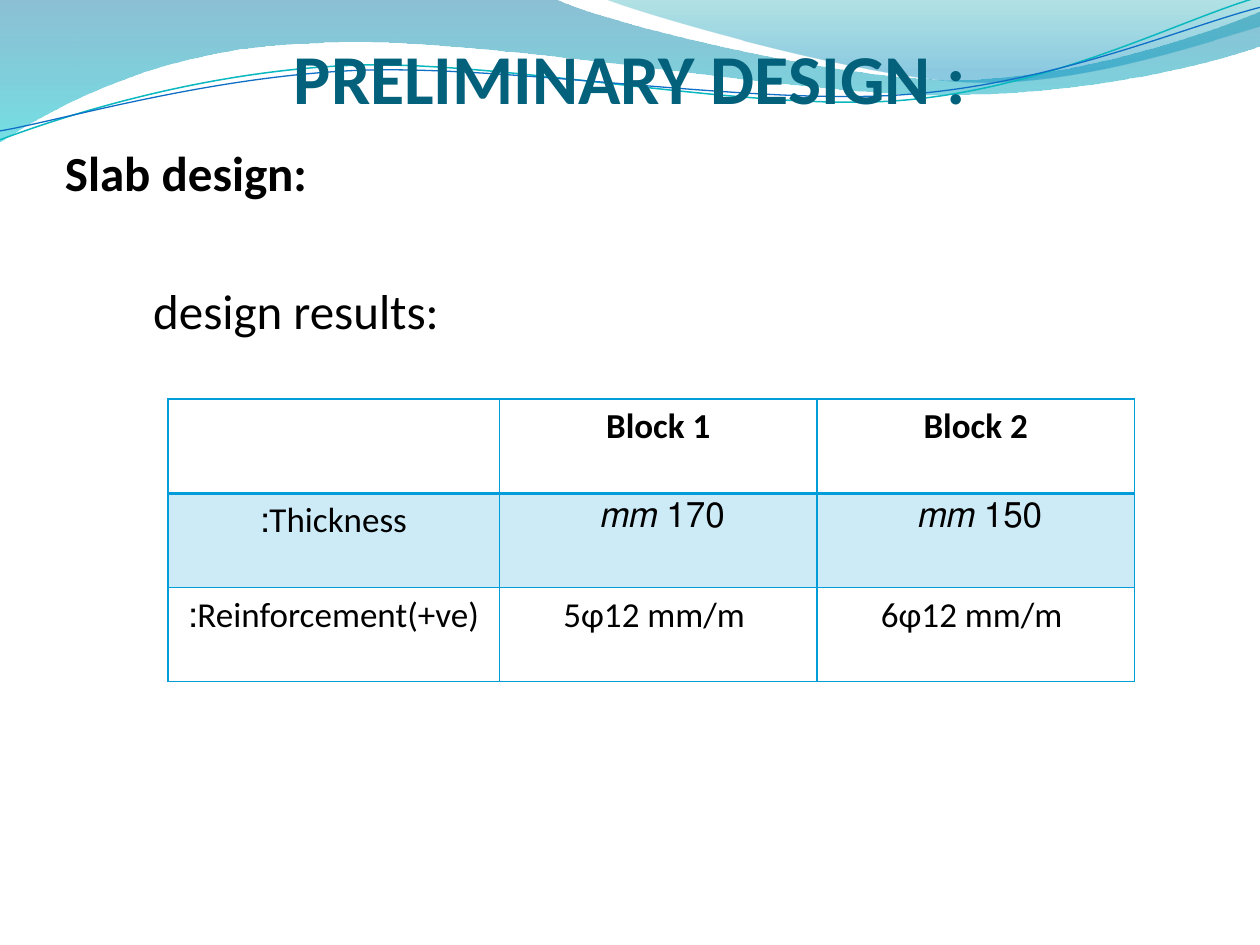
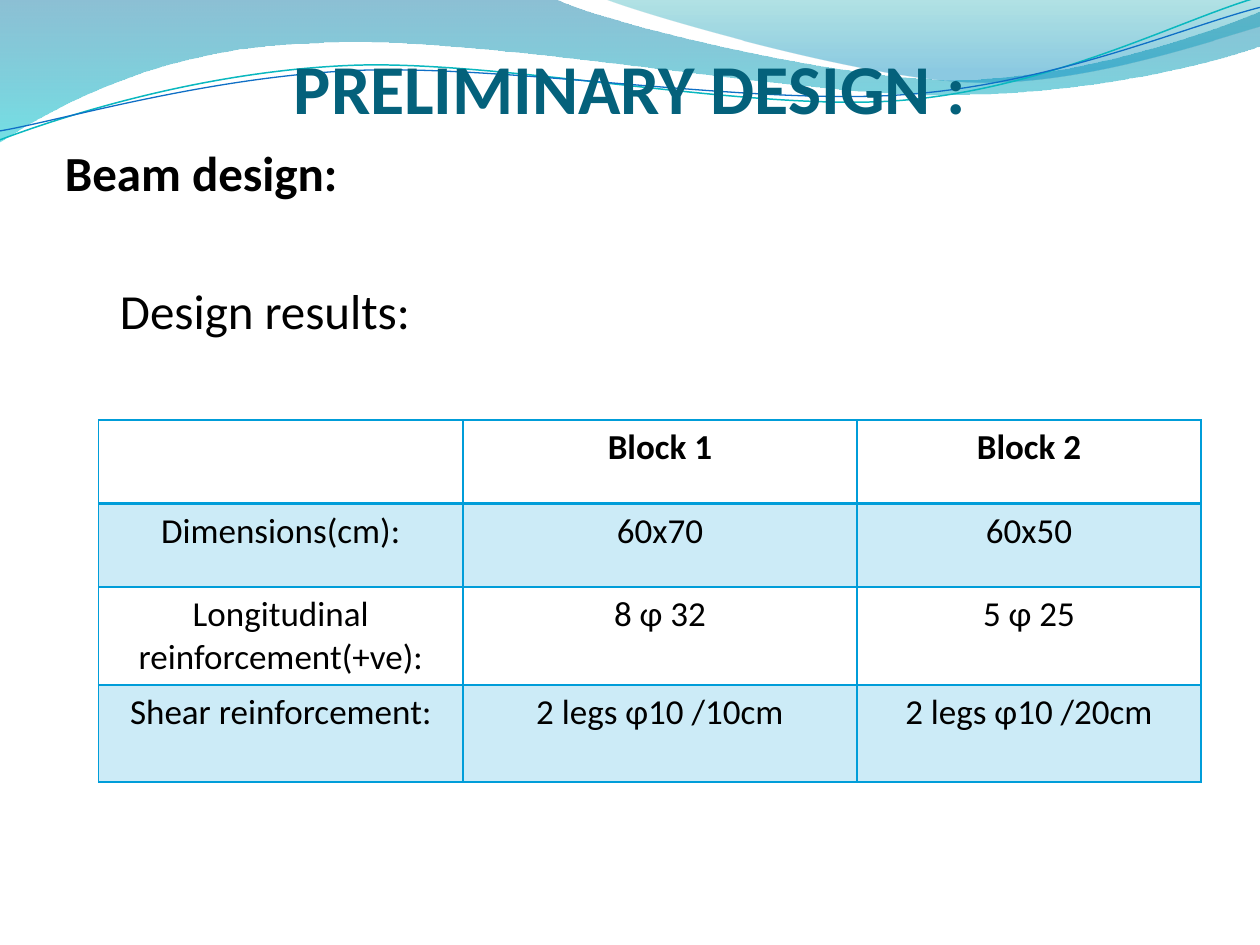
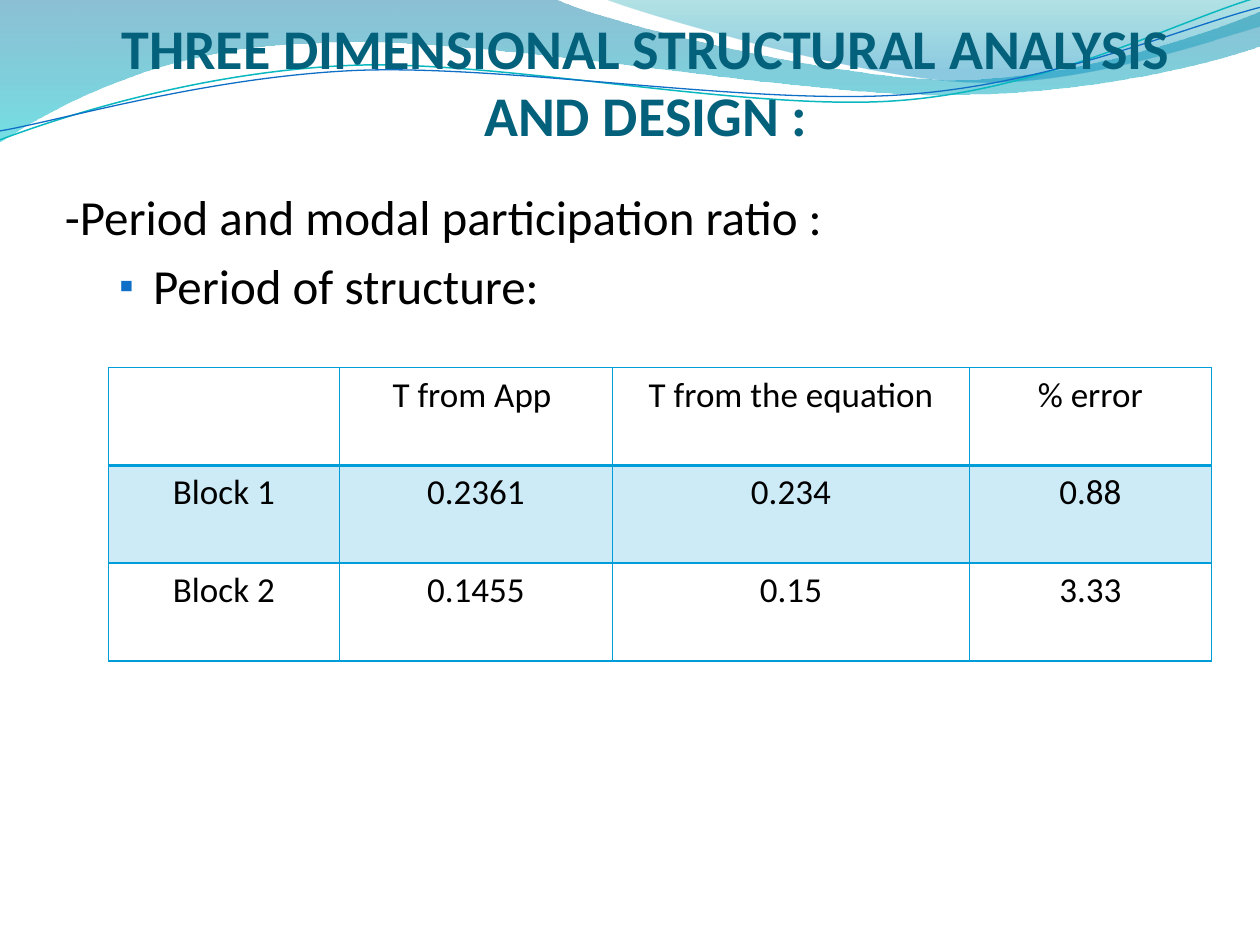
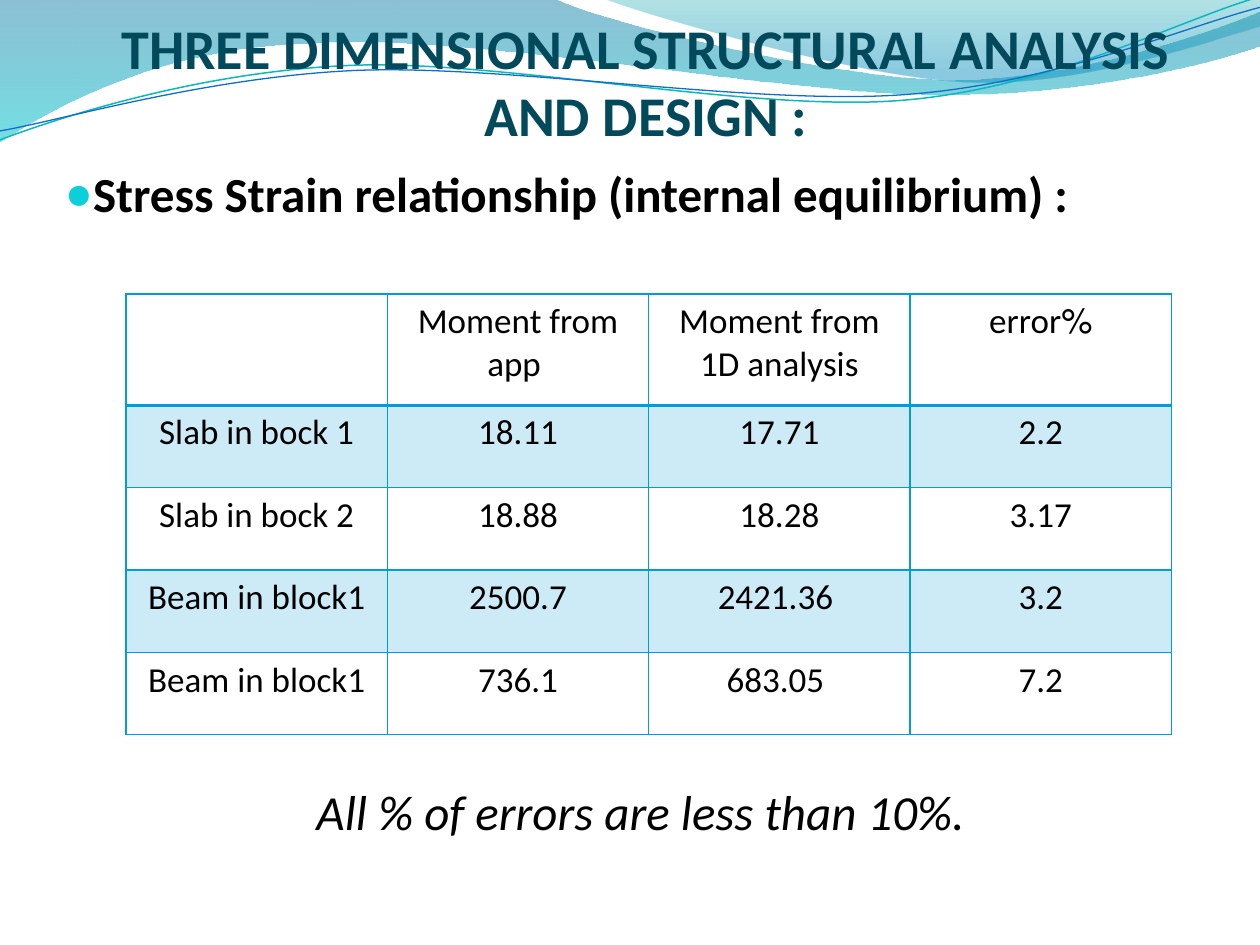
"""Builds four slides of structural design results under a shared wave header."""
from dataclasses import dataclass

from lxml import etree
from pptx import Presentation
from pptx import util as u
from pptx.dml.color import RGBColor
from pptx.enum import text
from pptx.oxml.ns import qn


@dataclass(frozen=True)
class Theme:
    """Colours, fonts and type sizes of the deck."""
    font: str = "Calibri"
    bullet_font: str = "Arial"
    ink: str = "000000"
    title: str = "04617B"
    deep_title: str = "03495C"
    grid: str = "009DD9"
    square: str = "0F6FC6"
    dot: str = "0BD0D9"
    title_size: float = 40
    long_title_size: float = 32
    body_size: float = 28
    cell_size: float = 20
    line_gap: float = 6
    blank_line_gap: float = 45.5
    table_gap: float = 319.5
    band_tint: int = 20


THEME = Theme()
CENTER = text.PP_ALIGN.CENTER
TITLE_BOX = (1.27, 0.43, 22.86, 1.96)
LONG_TITLE_BOX = (1.27, 0.85, 23.5, 2.13)
LONG_TITLE = "THREE DIMENSIONAL STRUCTURAL ANALYSIS AND DESIGN :"
RIGHT_TO_LEFT = {"Thickness:", "Reinforcement(+ve):", "170 𝑚𝑚 ", "150 𝑚𝑚 ", "%error"}

BANDS = [
    ((0, 0),
     [[(11.18, -0.03)],
      [(12.09, 0.43), (16.87, 1.6), (19.25, 1.6)],
      [(21.67, 1.6), (24.33, 0.66), (25.4, 0.23)],
      [(25.43, 0.91)],
      [(24.97, 1.12), (22.1, 1.93), (18.95, 1.91)],
      [(15.8, 1.91), (9.7, 0.71), (6.53, 0.86)],
      [(3.28, 0.91), (1.17, 2.11), (-0.03, 2.87)],
      [(0, 0)]],
     [(0, "0074A1", 45), (1, "00C6CF", 55)]),
    ((12.17, -0.03),
     [[(12.93, 0.28), (17.32, 1.57), (19.53, 1.65)],
      [(21.74, 1.75), (24.41, 0.81), (25.4, 0.53)],
      [(25.4, 0)],
      [(12.17, -0.03)]],
     [(0, "00A1A9", 30), (0.8, "008BBF", 45)]),
]
STRANDS = [
    ((0, 2.82),
     [[(1.22, 2.36), (4.01, 1.45), (7.04, 1.32)],
      [(10.03, 1.19), (15.06, 2.26), (18.11, 2.03)],
      [(21.16, 1.8), (23.83, 0.38), (25.35, -0.05)]],
     "0AB8BF", 0.85),
    ((0, 2.64),
     [[(1.19, 2.44), (4.17, 1.55), (7.19, 1.42)],
      [(10.24, 1.3), (15.16, 2.13), (18.21, 1.91)],
      [(21.23, 1.7), (23.9, 0.53), (25.4, 0.15)]],
     "0F6FC6", 0.75),
]


def rgb(color):
    """Return a colour object for a hex string."""
    return RGBColor.from_string(color)


def fade(element, percents):
    """Set the opacity of the colours in an element, in order."""
    for color, percent in zip(element.iter(qn("a:srgbClr")), percents):
        etree.SubElement(color, qn("a:alpha"), val=str(percent * 1000))


def write(para, words, size, color=THEME.ink, bold=False, italic=False,
          align=None, before=0, margin=0, hang=0, bullet=None):
    """Write one formatted run into a paragraph."""
    span = para.add_run()
    span.text = words
    font = span.font
    font.name, font.size, font.bold, font.italic = THEME.font, u.Pt(size), bold, italic
    font.color.rgb = rgb(color)
    para.alignment = align
    para.space_before = u.Pt(before)
    props = para._p.get_or_add_pPr()
    if margin:
        props.set("marL", str(u.Cm(margin)))
        props.set("indent", str(-u.Cm(hang)))
    if words in RIGHT_TO_LEFT:
        props.set("rtl", "1")
    if bullet:
        sign, tint, percent = bullet
        etree.SubElement(etree.SubElement(props, qn("a:buClr")), qn("a:srgbClr"), val=tint)
        etree.SubElement(props, qn("a:buSzPct"), val=str(percent * 1000))
        etree.SubElement(props, qn("a:buFont"), typeface=THEME.bullet_font)
        etree.SubElement(props, qn("a:buChar"), char=sign)


def add_outline(slide, start, pieces, close):
    """Draw a freeform of straight pieces (one point) and cubic pieces (three points)."""
    builder = slide.shapes.build_freeform(*map(u.Cm, start))
    builder.add_line_segments([(u.Cm(x), u.Cm(y)) for piece in pieces for x, y in piece],
                              close=close)
    shape = builder.convert_to_shape()
    shape.shadow.inherit = False
    segments = iter(list(shape.element.iter(qn("a:lnTo"))))
    for piece in pieces:
        first, *others = [next(segments) for _ in piece]
        if others:
            first.addnext(curve := etree.Element(qn("a:cubicBezTo")))
            for segment in (first, *others):
                curve.append(segment[0])
                segment.getparent().remove(segment)
    return shape


def add_waves(slide):
    """Draw the wave header and hand it to the layout that all slides share."""
    waves = []
    for start, pieces, stops in BANDS:
        band = add_outline(slide, start, pieces, True)
        band.line.fill.background()
        band.fill.gradient()
        band.fill.gradient_angle = 270
        for stop, (position, color, _) in zip(band.fill.gradient_stops, stops):
            stop.position = position
            stop.color.rgb = rgb(color)
        fade(band.element, [opacity for _, _, opacity in stops])
        waves.append(band)
    for start, pieces, color, width in STRANDS:
        strand = add_outline(slide, start, pieces, False)
        strand.fill.background()
        strand.line.color.rgb = rgb(color)
        strand.line.width = u.Pt(width)
        waves.append(strand)
    for number, wave in enumerate(waves, 20):
        wave.element.nvSpPr.cNvPr.set("id", str(number))
        slide.slide_layout.shapes.element.append(wave.element)


def add_title(slide, box, words, size, color=THEME.title):
    """Place and format the title placeholder."""
    title = slide.shapes.title
    title.left, title.top, title.width, title.height = map(u.Cm, box)
    frame = title.text_frame
    frame.word_wrap = True
    frame.auto_size = text.MSO_AUTO_SIZE.NONE
    frame.vertical_anchor = text.MSO_ANCHOR.BOTTOM
    frame.margin_left = frame.margin_right = frame.margin_bottom = 0
    frame.margin_top = u.Cm(0.13)
    write(frame.paragraphs[0], words, size, color, bold=True, align=CENTER)


def add_body(slide, box, lines):
    """Place a text box with one paragraph for each line and its format."""
    frame = slide.shapes.add_textbox(*map(u.Cm, box)).text_frame
    frame.word_wrap = True
    for index, (words, style) in enumerate(lines):
        para = frame.add_paragraph() if index else frame.paragraphs[0]
        write(para, words, THEME.body_size, **style)


def add_borders(cell, widths):
    """Rule the left, right, top and bottom edges of a cell."""
    props = cell._tc.get_or_add_tcPr()
    for index, (side, width) in enumerate(zip("LRTB", widths)):
        line = etree.Element(qn(f"a:ln{side}"), w=str(u.Pt(width)))
        fill = etree.SubElement(line, qn("a:solidFill"))
        etree.SubElement(fill, qn("a:srgbClr"), val=THEME.grid)
        props.insert(index, line)


def add_results(slide, corner, widths, heights, rows, bold_head=False):
    """Place a ruled table whose odd body rows are tinted."""
    size = (sum(widths), sum(heights))
    table = slide.shapes.add_table(len(rows), len(widths),
                                   *map(u.Cm, corner + size)).table
    for column, width in zip(table.columns, widths):
        column.width = u.Cm(width)
    for index, (row, height, values) in enumerate(zip(table.rows, heights, rows)):
        row.height = u.Cm(height)
        for cell, words in zip(row.cells, values):
            if index % 2:
                cell.fill.solid()
                cell.fill.fore_color.rgb = rgb(THEME.grid)
                fade(cell._tc, [THEME.band_tint])
            else:
                cell.fill.background()
            add_borders(cell, (1, 1, 2 if index == 1 else 1, 2 if index == 0 else 1))
            if words:
                write(cell.text_frame.paragraphs[0], words, THEME.cell_size,
                      bold=bold_head and index == 0, align=CENTER)


def add_preliminary(slide, title_box, heading, label, margin, **table):
    """Fill a preliminary design slide."""
    add_title(slide, title_box, "PRELIMINARY DESIGN :", THEME.title_size)
    add_body(slide, (1.06, 2.74, 23.7, 14.27), [
        (heading, {"bold": True}),
        (label, {"before": THEME.blank_line_gap, "margin": margin}),
    ])
    add_results(slide, bold_head=True, **table)


def add_analysis(slide, color, body_box, lines, **table):
    """Fill a three dimensional analysis slide."""
    add_title(slide, LONG_TITLE_BOX, LONG_TITLE, THEME.long_title_size, color)
    add_body(slide, body_box, lines)
    add_results(slide, **table)


def main():
    """Build and save the deck."""
    deck = Presentation()
    deck.slide_width, deck.slide_height = u.Cm(25.4), u.Cm(19.05)
    slab, beam, period, stress = [deck.slides.add_slide(deck.slide_layouts[5])
                                  for _ in range(4)]
    add_waves(slab)

    add_preliminary(
        slab, TITLE_BOX, "Slab design:", "design results:", 1.78,
        corner=(3.39, 8.04), widths=[6.68, 6.4, 6.4], heights=[1.9] * 3,
        rows=[("", "Block 1", "Block 2"),
              ("Thickness:", "170 𝑚𝑚 ", "150 𝑚𝑚 "),
              ("Reinforcement(+ve):", "5φ12 mm/m ", "6φ12 mm/m ")])

    add_preliminary(
        beam, (*TITLE_BOX[:3], 2.16), "Beam design:", "Design results:", 1.11,
        corner=(1.99, 8.47), widths=[7.34, 7.95, 6.93],
        heights=[1.68, 1.68, 1.98, 1.95],
        rows=[("", "Block 1", "Block 2"),
              ("Dimensions(cm):", "60x70", "60x50"),
              ("Longitudinal reinforcement(+ve):", "8 φ 32", "5 φ 25"),
              ("Shear reinforcement:", "2 legs φ10 /10cm", "2 legs φ10 /20cm")])

    add_analysis(
        period, THEME.title, (1.06, 3.63, 23.7, 14.43),
        [("-Period and modal participation ratio :", {}),
         ("Period of structure:", {"before": THEME.line_gap, "margin": 1.78, "hang": 0.69,
                                   "bullet": ("▪", THEME.square, 85)})],
        corner=(2.19, 7.41), widths=[4.65, 5.51, 7.19, 4.88], heights=[1.97] * 3,
        rows=[("", "T from App ", "T from the equation", "% error"),
              ("Block 1", "0.2361", "0.234", "0.88"),
              ("Block 2", "0.1455", "0.15", "3.33")])

    add_analysis(
        stress, THEME.deep_title, (1.06, 3.18, 23.7, 14.81),
        [("Stress Strain relationship (internal equilibrium) :",
          {"bold": True, "margin": 0.55, "hang": 0.55, "bullet": ("●", THEME.dot, 95)}),
         ("All % of errors are less than 10%.",
          {"italic": True, "align": CENTER, "before": THEME.table_gap})],
        corner=(2.54, 5.93), widths=[5.27] * 4, heights=[2.24] + [1.66] * 4,
        rows=[("", "Moment from app ", "Moment from 1D analysis", "%error"),
              ("Slab in bock 1", "18.11", "17.71", "2.2"),
              ("Slab in bock 2", "18.88", "18.28", "3.17"),
              ("Beam in block1", "2500.7", "2421.36 ", "3.2"),
              ("Beam in block1", "736.1", "683.05 ", "7.2")])

    deck.save("out.pptx")


if __name__ == "__main__":
    main()
